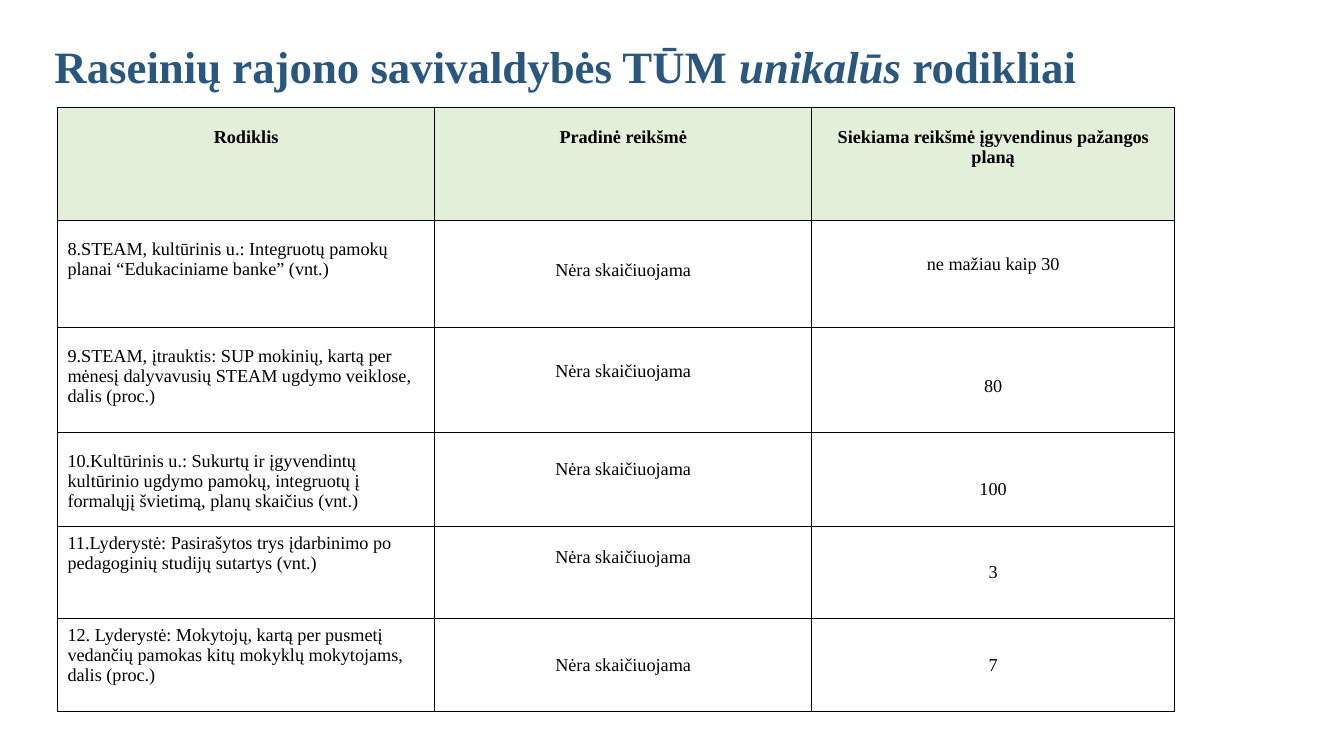
from lxml import etree
from pptx import Presentation
from pptx.dml.color import RGBColor
from pptx.enum.text import MSO_ANCHOR, MSO_AUTO_SIZE, PP_ALIGN
from pptx.oxml.ns import qn
from pptx.util import Inches, Pt

FONT = "Times New Roman"
COLORS = {"title": "29577E", "text": "000000", "border": "000000",
          "header": "E2EFD9", "body": "FFFFFF"}
PADDING = 0.07


def style_run(run, size, color, bold=False, italic=False):
    run.font.name = FONT
    run.font.size = Pt(size)
    run.font.bold = bold
    run.font.italic = italic
    run.font.color.rgb = RGBColor.from_string(COLORS[color])


def add_borders(cell):
    properties = cell._tc.get_or_add_tcPr()
    for side in ("a:lnL", "a:lnR", "a:lnT", "a:lnB"):
        line = etree.SubElement(properties, qn(side), w=str(Pt(0.75)))
        fill = etree.SubElement(line, qn("a:solidFill"))
        etree.SubElement(fill, qn("a:srgbClr"), val=COLORS["border"])


presentation = Presentation()
presentation.slide_width = Inches(13.33)
presentation.slide_height = Inches(7.5)
slide = presentation.slides.add_slide(presentation.slide_layouts[6])

# Title
title = slide.shapes.add_textbox(Inches(0.54), Inches(0.3), Inches(11.55), Inches(0.62))
title_frame = title.text_frame
title_frame.word_wrap = True
title_frame.auto_size = MSO_AUTO_SIZE.SHAPE_TO_FIT_TEXT
title_frame.margin_left = title_frame.margin_right = 0
title_frame.margin_top = title_frame.margin_bottom = 0
title_line = title_frame.paragraphs[0]
title_line.line_spacing = 1.16
for words, italic in (("Raseinių rajono savivaldybės TŪM ", False),
                      ("unikalūs ", True), ("rodikliai", False)):
    run = title_line.add_run()
    run.text = words
    style_run(run, 32, "title", bold=True, italic=italic)

# Each entry: text and its vertical shift in inches
# (from the top for the header and first column, from the middle elsewhere)
uncounted = "Nėra skaičiuojama"
indicators = [
    [("Rodiklis", 0.12), ("Pradinė reikšmė", 0.12),
     ("Siekiama reikšmė įgyvendinus pažangos planą", 0.12)],
    [("8.STEAM, kultūrinis u.: Integruotų pamokų planai “Edukaciniame banke” (vnt.)", 0.12),
     (uncounted, -0.04), ("ne mažiau kaip 30", -0.1)],
    [("9.STEAM, įtrauktis: SUP mokinių, kartą per mėnesį dalyvavusių STEAM ugdymo "
      "veiklose, dalis (proc.)", 0.12),
     (uncounted, -0.09), ("80", 0.06)],
    [("10.Kultūrinis u.: Sukurtų ir įgyvendintų kultūrinio ugdymo pamokų, integruotų į "
      "formalųjį švietimą, planų skaičius (vnt.)", 0.12),
     (uncounted, -0.1), ("100", 0.1)],
    [("11.Lyderystė: Pasirašytos trys įdarbinimo po pedagoginių studijų sutartys (vnt.)", 0),
     (uncounted, -0.15), ("3", 0)],
    [("12. Lyderystė: Mokytojų, kartą per pusmetį vedančių pamokas kitų mokyklų "
      "mokytojams, dalis (proc.)", 0),
     (uncounted, 0), ("7", 0)],
]
column_widths = [3.74, 3.74, 3.6]
row_heights = [1.12, 1.06, 1.04, 0.93, 0.92, 0.92]

# Indicator table
table = slide.shapes.add_table(
    len(row_heights), len(column_widths), Inches(0.57), Inches(1.07),
    Inches(sum(column_widths)), Inches(sum(row_heights))).table
table.first_row = True
table.horz_banding = False
for column, width in zip(table.columns, column_widths):
    column.width = Inches(width)

for row_index, (entries, height) in enumerate(zip(indicators, row_heights)):
    table.rows[row_index].height = Inches(height)
    is_header = row_index == 0
    for column_index, (words, shift) in enumerate(entries):
        cell = table.cell(row_index, column_index)
        from_top = is_header or column_index == 0
        added = shift if from_top else 2 * shift
        cell.vertical_anchor = MSO_ANCHOR.TOP if from_top else MSO_ANCHOR.MIDDLE
        cell.margin_left = cell.margin_right = Inches(0.1)
        cell.margin_top = Inches(PADDING + max(added, 0))
        cell.margin_bottom = Inches(PADDING + max(-added, 0))

        cell.text_frame.text = words
        paragraph = cell.text_frame.paragraphs[0]
        centred = is_header or column_index > 0
        paragraph.alignment = PP_ALIGN.CENTER if centred else PP_ALIGN.LEFT
        style_run(paragraph.runs[0], 13, "text", bold=is_header)

        add_borders(cell)
        cell.fill.solid()
        cell.fill.fore_color.rgb = RGBColor.from_string(
            COLORS["header" if is_header else "body"])

presentation.save("out.pptx")
